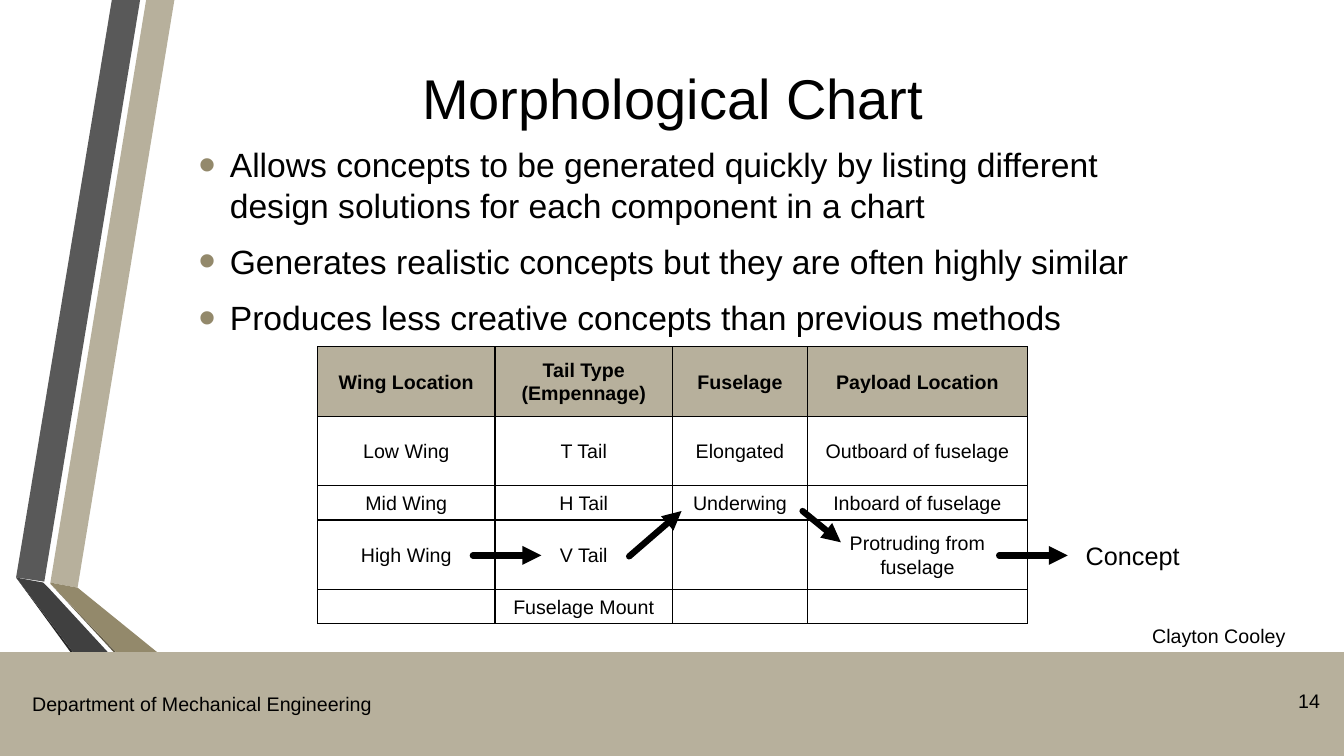
from lxml.etree import SubElement
from pptx import Presentation
from pptx.dml.color import RGBColor
from pptx.enum.shapes import MSO_CONNECTOR, MSO_SHAPE
from pptx.enum.text import MSO_ANCHOR, MSO_AUTO_SIZE, PP_ALIGN
from pptx.oxml import parse_xml
from pptx.oxml.ns import nsdecls, qn
from pptx.util import Inches, Pt

BLACK = RGBColor(0x00, 0x00, 0x00)
WHITE = RGBColor(0xFF, 0xFF, 0xFF)
TAN = RGBColor(0xB7, 0xB0, 0x9C)
OLIVE = RGBColor(0x93, 0x89, 0x6B)
DARK_OLIVE = RGBColor(0x62, 0x5B, 0x47)
GRAY = RGBColor(0x59, 0x59, 0x59)
DARK_GRAY = RGBColor(0x40, 0x40, 0x40)
CHARCOAL = RGBColor(0x26, 0x26, 0x26)
FONT = "Arial"

# Content
TITLE = "Morphological Chart"
BULLETS = [
    "Allows concepts to be generated quickly by listing different "
    "design solutions for each component in a chart",
    "Generates realistic concepts but they are often highly similar",
    "Produces less creative concepts than previous methods",
]
CHART_ROWS = [
    ["Wing Location", "Tail Type (Empennage)", "Fuselage", "Payload Location"],
    ["Low Wing", "T Tail", "Elongated", "Outboard of fuselage"],
    ["Mid Wing", "H Tail", "Underwing", "Inboard of fuselage"],
    ["High Wing", "V Tail", "", "Protruding from fuselage"],
    ["", "Fuselage Mount", "", ""],
]
COLUMN_WIDTHS = [1.76, 1.76, 1.34, 2.18]
ROW_HEIGHTS = [0.69, 0.69, 0.34, 0.69, 0.34]
# Each arrow: start x, start y, end x, end y
ARROWS = [
    (4.69, 5.51, 5.37, 5.51),
    (6.24, 5.52, 6.76, 5.07),
    (7.96, 5.07, 8.34, 5.38),
    (9.91, 5.51, 10.59, 5.51),
]
RIBBONS = [
    (TAN, [(0.5, 5.78), (0.77, 5.83), (1.73, 0), (1.45, 0)]),
    (GRAY, [(1.39, 0), (1.11, 0), (0.16, 5.73), (0.44, 5.77)]),
    (CHARCOAL, [(0.16, 5.73), (1.45, 7.5), (1.51, 7.5)]),
    (DARK_OLIVE, [(0.5, 5.79), (2.08, 7.5), (2.14, 7.5)]),
    (OLIVE, [(0.5, 5.79), (2.14, 7.5), (2.83, 7.5), (0.77, 5.83), (0.5, 5.78)]),
    (DARK_GRAY, [(2.02, 7.5), (0.48, 5.83), (0.43, 5.78), (0.16, 5.73), (1.51, 7.5)]),
]
# Each label: text, left, top, width, height, size, alignment, wrap
LABELS = [
    ("Department of Mechanical Engineering", 0.22, 6.82, 3.59, 0.34, 14, PP_ALIGN.LEFT, False),
    ("Clayton Cooley", 11.33, 6.14, 2, 0.34, 14, PP_ALIGN.LEFT, True),
    ("Concept", 10.67, 5.31, 1.15, 0.4, 18, PP_ALIGN.LEFT, True),
    ("14", 12.42, 6.79, 0.77, 0.4, 14, PP_ALIGN.RIGHT, True),
]


def add_text(para, text, size, align=PP_ALIGN.LEFT, bold=False):
    para.alignment = align
    span = para.add_run()
    span.text = text
    span.font.name = FONT
    span.font.size = Pt(size)
    span.font.bold = bold
    span.font.color.rgb = BLACK


def paint(shape, color):
    shape.shadow.inherit = False
    shape.fill.solid()
    shape.fill.fore_color.rgb = color
    shape.line.fill.background()


def place(shape, left, top, width, height):
    shape.left, shape.top = Inches(left), Inches(top)
    shape.width, shape.height = Inches(width), Inches(height)


def add_bullet(para):
    props = para._p.get_or_add_pPr()
    props.set("marL", str(Inches(0.31)))
    props.set("indent", str(-Inches(0.31)))
    color = SubElement(props, qn("a:buClr"))
    SubElement(color, qn("a:srgbClr")).set("val", str(OLIVE))
    SubElement(props, qn("a:buSzPct")).set("val", "145000")
    SubElement(props, qn("a:buFont")).set("typeface", FONT)
    SubElement(props, qn("a:buChar")).set("char", "•")


def add_borders(cell):
    props = cell._tc.get_or_add_tcPr()
    for index, side in enumerate(("lnL", "lnR", "lnT", "lnB")):
        props.insert(index, parse_xml(
            f'<a:{side} {nsdecls("a")} w="{Pt(1)}"><a:solidFill>'
            f'<a:srgbClr val="{BLACK}"/></a:solidFill></a:{side}>'))


deck = Presentation()
deck.slide_width, deck.slide_height = Inches(13.33), Inches(7.5)
page = deck.slides.add_slide(deck.slide_layouts[1])
title, body = page.placeholders

# Folded ribbons and footer band
for color, points in RIBBONS:
    corners = [(Inches(x), Inches(y)) for x, y in points]
    builder = page.shapes.build_freeform(*corners[0])
    builder.add_line_segments(corners[1:], close=True)
    paint(builder.convert_to_shape(), color)
band = page.shapes.add_shape(
    MSO_SHAPE.RECTANGLE, 0, Inches(6.47), deck.slide_width, Inches(1.03))
paint(band, TAN)

# Title and bullet list
place(title, 1.19, 0, 10.96, 1.92)
title.text_frame.vertical_anchor = MSO_ANCHOR.MIDDLE
title.text_frame.auto_size = MSO_AUTO_SIZE.NONE
add_text(title.text_frame.paragraphs[0], TITLE, 40, PP_ALIGN.CENTER)

place(body, 1.87, 1.38, 9.58, 4.36)
body.text_frame.auto_size = MSO_AUTO_SIZE.NONE
for index, bullet in enumerate(BULLETS):
    para = body.text_frame.add_paragraph() if index else body.text_frame.paragraphs[0]
    add_bullet(para)
    para.space_before = Pt(5.5 if index else 0)
    para.space_after = Pt(6)
    add_text(para, bullet, 24)

# Morphological chart
frame = page.shapes.add_table(
    len(CHART_ROWS), len(COLUMN_WIDTHS), Inches(3.15), Inches(3.44),
    Inches(sum(COLUMN_WIDTHS)), Inches(sum(ROW_HEIGHTS)))
table = frame.table
for column, width in zip(table.columns, COLUMN_WIDTHS):
    column.width = Inches(width)
for row_index, (row, height) in enumerate(zip(table.rows, ROW_HEIGHTS)):
    row.height = Inches(height)
    is_header = row_index == 0
    for cell, text in zip(row.cells, CHART_ROWS[row_index]):
        cell.margin_left = cell.margin_right = Inches(0.1)
        cell.margin_top = cell.margin_bottom = 0
        cell.vertical_anchor = MSO_ANCHOR.MIDDLE
        cell.fill.solid()
        cell.fill.fore_color.rgb = TAN if is_header else WHITE
        add_borders(cell)
        if text:
            para = cell.text_frame.paragraphs[0]
            para.line_spacing = 1.07
            add_text(para, text, 14, PP_ALIGN.CENTER, is_header)

# Arrows tracing the chosen concept
for x1, y1, x2, y2 in ARROWS:
    arrow = page.shapes.add_connector(
        MSO_CONNECTOR.STRAIGHT, Inches(x1), Inches(y1), Inches(x2), Inches(y2))
    arrow.line.color.rgb = BLACK
    arrow.line.width = Pt(4.5)
    line = arrow.line._get_or_add_ln()
    line.set("cap", "rnd")
    SubElement(line, qn("a:tailEnd")).set("type", "triangle")
    SubElement(arrow._element.spPr, qn("a:effectLst"))

# Labels
for text, left, top, width, height, size, align, wrap in LABELS:
    box = page.shapes.add_textbox(
        Inches(left), Inches(top), Inches(width), Inches(height))
    box.text_frame.word_wrap = wrap
    add_text(box.text_frame.paragraphs[0], text, size, align)

deck.save("out.pptx")
